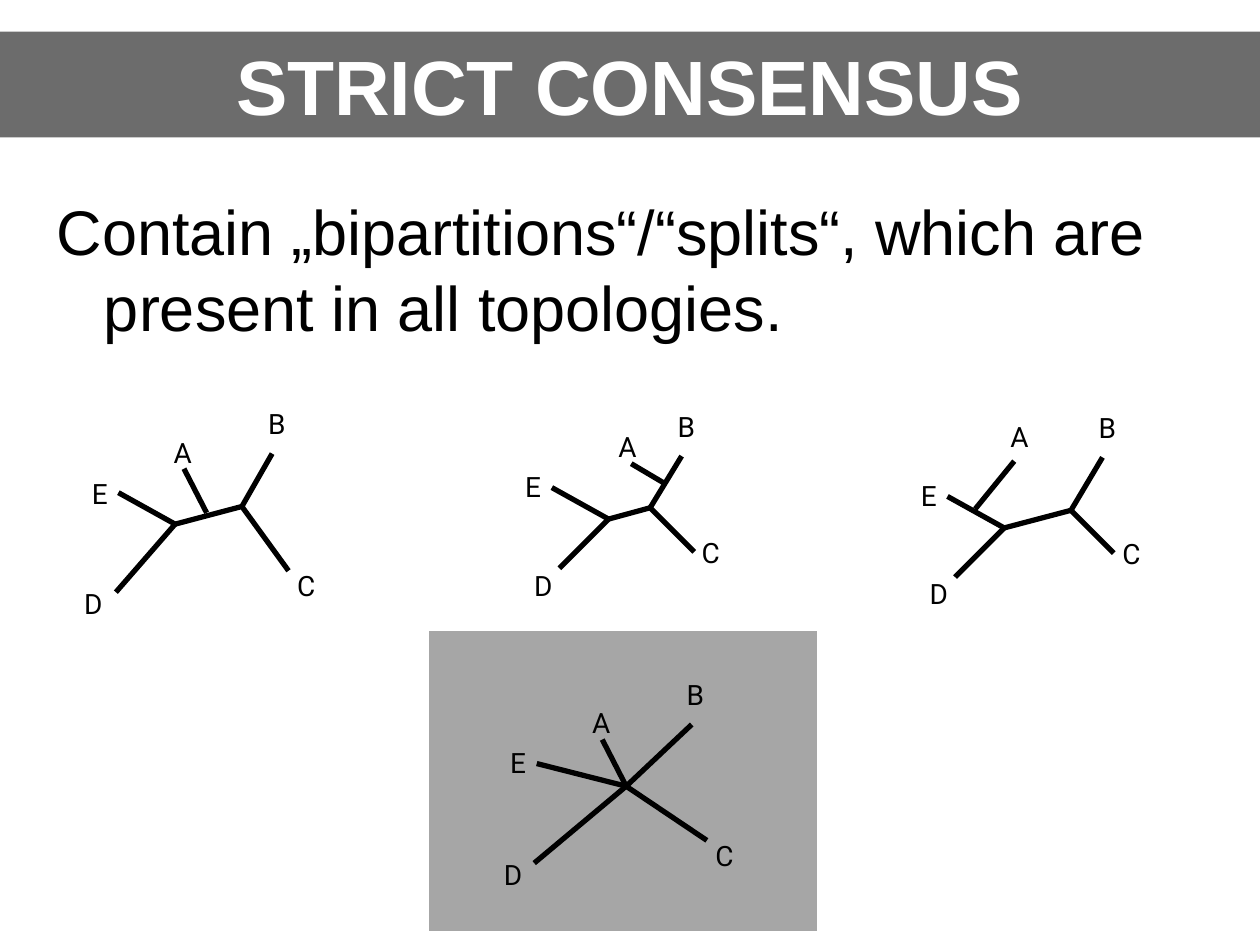
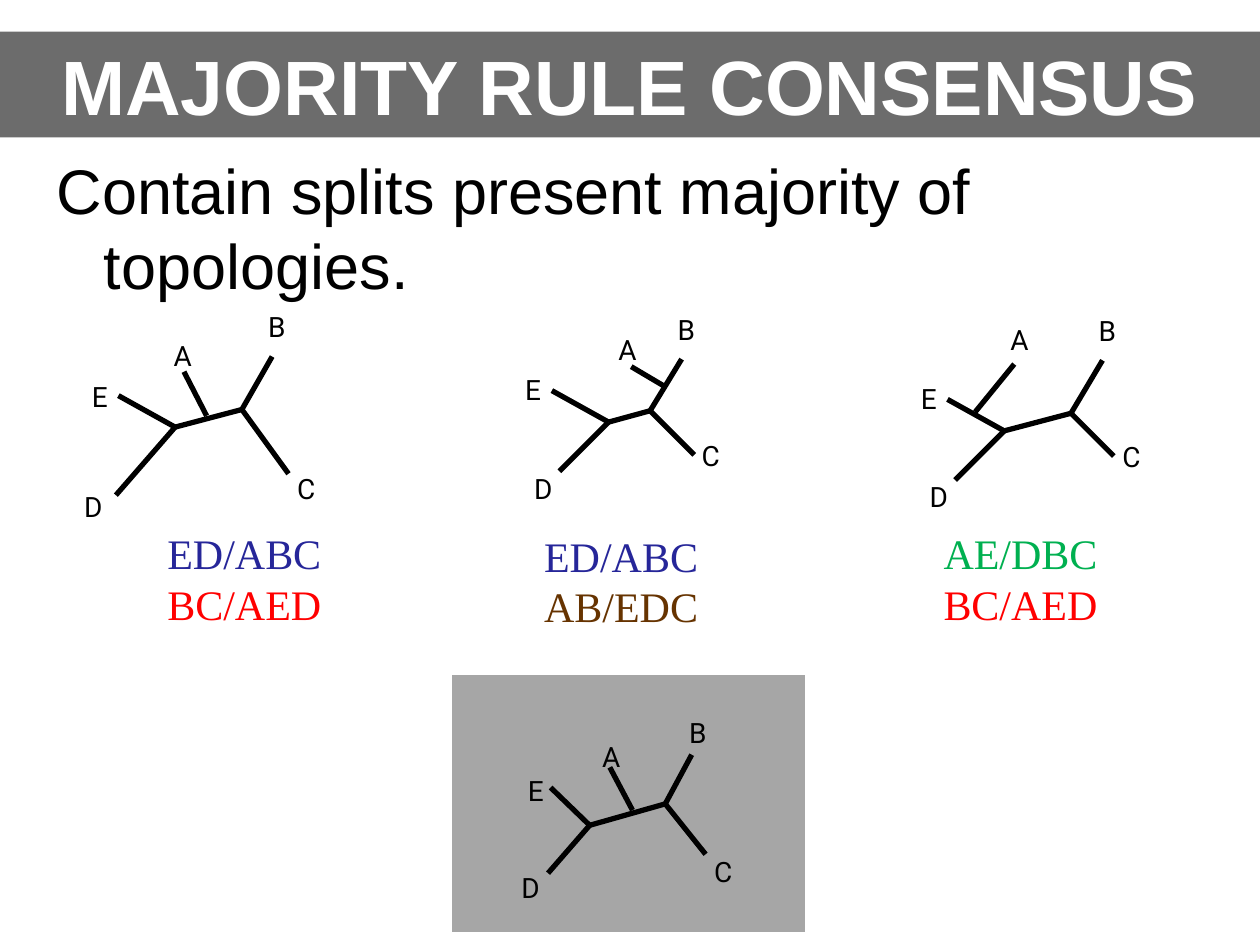
from dataclasses import dataclass

from pptx import Presentation
from pptx.dml.color import RGBColor
from pptx.enum.shapes import MSO_CONNECTOR as CONN, MSO_SHAPE as SHAPE
from pptx.enum.text import MSO_ANCHOR as ANCHOR, MSO_AUTO_SIZE as AUTO, PP_ALIGN as ALIGN
from pptx.oxml.ns import qn
from pptx.util import Inches, Pt
from lxml.etree import SubElement

W, H = 10, 7.5
COLORS = {
    "band": "404040", "panel": "A6A6A6", "white": "FFFFFF", "black": "000000",
    "blue": "262699", "red": "FF0000", "brown": "663300", "green": "00B050",
}
FORMATS = {
    "title": {"name": "Arial", "size": Pt(44), "bold": True},
    "body": {"name": "Arial", "size": Pt(36)},
    "tip": {"name": "Roboto", "size": Pt(16)},
    "split": {"name": "Times New Roman", "size": Pt(24)},
}
SPLIT_COLORS = {"ED/ABC": "blue", "BC/AED": "red", "AB/EDC": "brown", "AE/DBC": "green"}


@dataclass
class Tree:
    """Offsets in inches from the joint of D and E; labels are box corners."""
    stem: tuple    # joint of B and C
    a_root: tuple  # where branch A starts
    tips: dict
    labels: dict


TREE_A_INSIDE = Tree(
    (0.53, -0.14), (0.25, -0.09),
    {"A": (0.07, -0.44), "B": (0.77, -0.56), "C": (0.9, 0.37),
     "D": (-0.47, 0.54), "E": (-0.45, -0.25)},
    {"A": (-0.11, -0.75), "B": (0.64, -0.98), "C": (0.87, 0.3),
     "D": (-0.82, 0.45), "E": (-0.76, -0.43)})
TREE_A_WITH_B = Tree(
    (0.33, -0.09), (0.45, -0.28),
    {"A": (0.18, -0.44), "B": (0.58, -0.5), "C": (0.68, 0.26),
     "D": (-0.39, 0.39), "E": (-0.45, -0.25)},
    {"A": (-0.02, -0.76), "B": (0.45, -0.92), "C": (0.64, 0.08),
     "D": (-0.69, 0.34), "E": (-0.76, -0.44)})
TREE_A_WITH_E = Tree(
    (0.53, -0.14), (-0.23, -0.15),
    {"A": (0.08, -0.53), "B": (0.78, -0.56), "C": (0.87, 0.2),
     "D": (-0.39, 0.39), "E": (-0.45, -0.25)},
    {"A": (-0.05, -0.91), "B": (0.65, -0.98), "C": (0.84, 0.02),
     "D": (-0.69, 0.34), "E": (-0.76, -0.44)})
STRICT_TREE = Tree(
    (0, 0), (0, 0),
    {"A": (-0.19, -0.37), "B": (0.52, -0.49), "C": (0.64, 0.43),
     "D": (-0.73, 0.61), "E": (-0.71, -0.18)},
    {"A": (-0.37, -0.69), "B": (0.38, -0.91), "C": (0.61, 0.37),
     "D": (-1.07, 0.52), "E": (-1.02, -0.37)})
MAJORITY_TREE = Tree(
    (0.6, -0.17), (0.34, -0.12),
    {"A": (0.16, -0.46), "B": (0.81, -0.56), "C": (0.92, 0.23),
     "D": (-0.33, 0.38), "E": (-0.31, -0.3)},
    {"A": (0, -0.73), "B": (0.69, -0.92), "C": (0.89, 0.18),
     "D": (-0.64, 0.31), "E": (-0.59, -0.46)})

# tree, x of its joint, shift of the joint from the row line
INPUT_TREES = [(TREE_A_INSIDE, 1.39, 0), (TREE_A_WITH_B, 4.83, -0.04),
               (TREE_A_WITH_E, 7.97, 0.03)]


def rgb(name):
    return RGBColor.from_string(COLORS[name])


def write(p, text, style, color="black"):
    r = p.add_run()
    r.text = text
    for key, value in FORMATS[style].items():
        setattr(r.font, key, value)
    r.font.color.rgb = rgb(color)


def place(sp, x, y, w, h):
    for key, value in zip(("left", "top", "width", "height"), (x, y, w, h)):
        setattr(sp, key, Inches(value))


def add_title(s, text):
    """Full-width translucent band holding the title."""
    sp = s.shapes.title
    place(sp, 0, H / 30, W, 0.84)
    sp.fill.solid()
    sp.fill.fore_color.rgb = rgb("band")
    clr = sp.fill._xPr.find(qn("a:solidFill"))[0]
    SubElement(clr, qn("a:alpha"), val="77000")
    tf = sp.text_frame
    tf.auto_size, tf.vertical_anchor = AUTO.NONE, ANCHOR.MIDDLE
    tf.paragraphs[0].alignment = ALIGN.CENTER
    write(tf.paragraphs[0], text, "title", "white")


def add_body(s, text, top):
    sp = s.placeholders[1]
    place(sp, 0.35, top, W - 0.35, H * 0.6)
    tf = sp.text_frame
    tf.auto_size = AUTO.NONE
    p = tf.paragraphs[0]
    SubElement(p._p.get_or_add_pPr(), qn("a:buNone"))
    write(p, text, "body")


def add_panel(s, x, y, w, h):
    sp = s.shapes.add_shape(SHAPE.RECTANGLE, *map(Inches, (x, y, w, h)))
    sp.shadow.inherit = False
    sp.fill.solid()
    sp.fill.fore_color.rgb = rgb("panel")
    sp.line.color.rgb = rgb("white")
    sp.line.width = Pt(2)


def add_tree(s, tree, x, y):
    shapes = s.shapes.add_group_shape().shapes

    def at(offset):
        return Inches(x + offset[0]), Inches(y + offset[1])

    joint = (0, 0)
    roots = {"A": tree.a_root, "B": tree.stem, "C": tree.stem, "D": joint, "E": joint}
    branches = [(roots[name], tip) for name, tip in tree.tips.items()]
    if tree.stem != joint:
        branches.append((joint, tree.stem))
    for start, end in branches:
        line = shapes.add_connector(CONN.STRAIGHT, *at(start), *at(end))
        line.line.color.rgb = rgb("black")
        line.line.width = Pt(3)
        SubElement(line._element.spPr, qn("a:effectLst"))
    for name, corner in tree.labels.items():
        tf = shapes.add_textbox(*at(corner), Inches(0.35), Inches(0.37)).text_frame
        tf.word_wrap = False
        write(tf.paragraphs[0], name, "tip")


def add_splits(s, splits, x, y):
    tf = s.shapes.add_textbox(*map(Inches, (x, y, 1.56, 0.91))).text_frame
    tf.word_wrap = True
    for i, split in enumerate(splits):
        p = tf.add_paragraph() if i else tf.paragraphs[0]
        write(p, split, "split", SPLIT_COLORS[split])


def add_consensus_slide(prs, title, body, body_top, row, panel, tree, joint):
    s = prs.slides.add_slide(prs.slide_layouts[1])
    add_title(s, title)
    add_body(s, body, body_top)
    for input_tree, x, shift in INPUT_TREES:
        add_tree(s, input_tree, x, row + shift)
    add_panel(s, *panel)
    add_tree(s, tree, *joint)
    return s


def main():
    prs = Presentation()
    prs.slide_width, prs.slide_height = Inches(W), Inches(H)
    add_consensus_slide(
        prs, "STRICT CONSENSUS",
        "Contain „bipartitions“/“splits“, which are present in all topologies.",
        1.48, 4.16, (3.39, 4.99, 3.11, 2.41), STRICT_TREE, (4.97, 6.24))
    s = add_consensus_slide(
        prs, "MAJORITY RULE CONSENSUS",
        "Contain splits present majority of topologies.",
        1.15, 3.39, (3.57, 5.34, 2.83, 2.07), MAJORITY_TREE, (4.68, 6.55))
    add_splits(s, ["ED/ABC", "BC/AED"], 1.23, 4.14)
    add_splits(s, ["ED/ABC", "AB/EDC"], 4.22, 4.16)
    add_splits(s, ["AE/DBC", "BC/AED"], 7.39, 4.14)
    prs.save("out.pptx")


if __name__ == "__main__":
    main()
